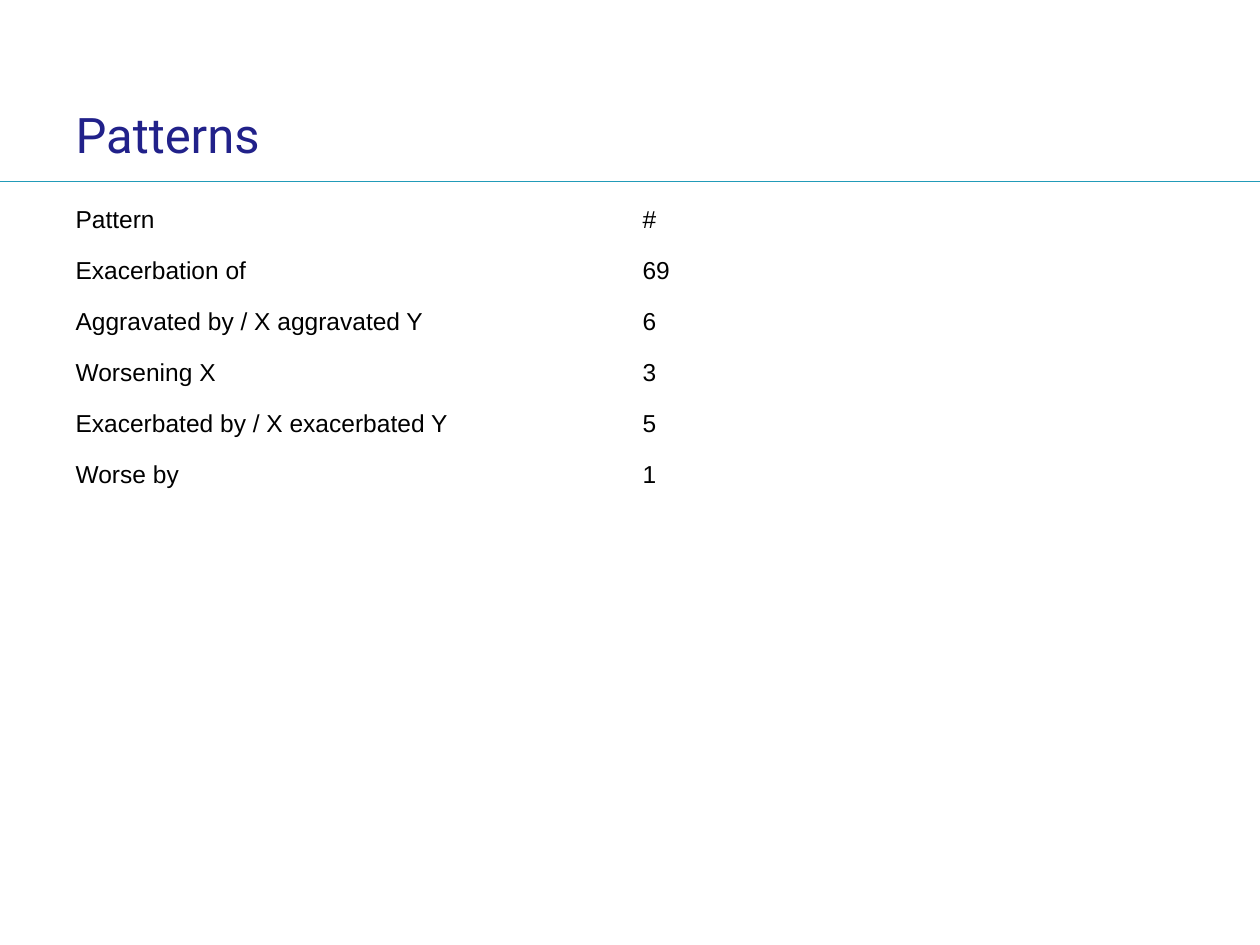
from lxml.etree import SubElement
from pptx import Presentation
from pptx.dml.color import RGBColor
from pptx.enum.shapes import MSO_CONNECTOR
from pptx.enum.text import MSO_ANCHOR, PP_ALIGN
from pptx.oxml.ns import qn
from pptx.util import Inches, Pt

TITLE = "Patterns"
ROWS = [
    ("Pattern", "#"),
    ("Exacerbation of", "69"),
    ("Aggravated by / X aggravated Y", "6"),
    ("Worsening X", "3"),
    ("Exacerbated by / X exacerbated Y", "5"),
    ("Worse by", "1"),
]
COLORS = {"title": "21218A", "rule": "229BB8", "text": "000000"}
FONTS = {
    "title": {"name": "Roboto", "size": Pt(28), "bold": False},
    "text": {"name": "Arial", "size": Pt(14), "bold": False},
}
FRAME = {
    "margin_left": Inches(0.1), "margin_right": Inches(0.1),
    "margin_top": Inches(0.1), "margin_bottom": Inches(0.1),
    "vertical_anchor": MSO_ANCHOR.MIDDLE, "word_wrap": True,
}
PLACE = {
    "left": Inches(0.5), "top": Inches(0.78),
    "width": Inches(7.21), "height": Inches(0.56),
}
FLAGS = {"first_row": False, "horz_banding": False}
WIDTH, EDGE, TOP, TALL = 10, 0.5, 1.59, 2.43


def apply(item, values):
    """Set each named attribute of the item."""
    for name, value in values.items():
        setattr(item, name, value)


def write(frame, text, role):
    """Fill a text frame in the style of its role."""
    frame.text = text
    line = frame.paragraphs[0]
    line.alignment = PP_ALIGN.LEFT
    font = line.runs[0].font
    apply(font, FONTS[role])
    font.color.rgb = RGBColor.from_string(COLORS[role])


def add_rule(slide):
    """Draw the line under the title."""
    rule = slide.shapes.add_connector(
        MSO_CONNECTOR.STRAIGHT, Inches(WIDTH), Inches(1.44), 0, Inches(1.44))
    rule.line.width = Pt(0.75)
    rule.line.color.rgb = RGBColor.from_string(COLORS["rule"])
    SubElement(rule._element.spPr, qn("a:effectLst"))


def add_counts(slide):
    """Add the table of patterns and their counts."""
    table = slide.shapes.add_table(
        len(ROWS), len(ROWS[0]), Inches(EDGE), Inches(TOP),
        Inches(WIDTH - 2 * EDGE), Inches(TALL)).table
    apply(table, FLAGS)
    for row, texts in zip(table.rows, ROWS):
        for cell, text in zip(row.cells, texts):
            cell.fill.background()
            write(cell.text_frame, text, "text")


def main():
    """Build and save the slide."""
    deck = Presentation()
    apply(deck, {"slide_width": Inches(WIDTH), "slide_height": Inches(7.5)})
    slide = deck.slides.add_slide(deck.slide_layouts.get_by_name("Title Only"))
    add_rule(slide)
    add_counts(slide)
    title = slide.shapes.title
    apply(title, PLACE)
    apply(title.text_frame, FRAME)
    write(title.text_frame, TITLE, "title")
    deck.save("out.pptx")


if __name__ == "__main__":
    main()
